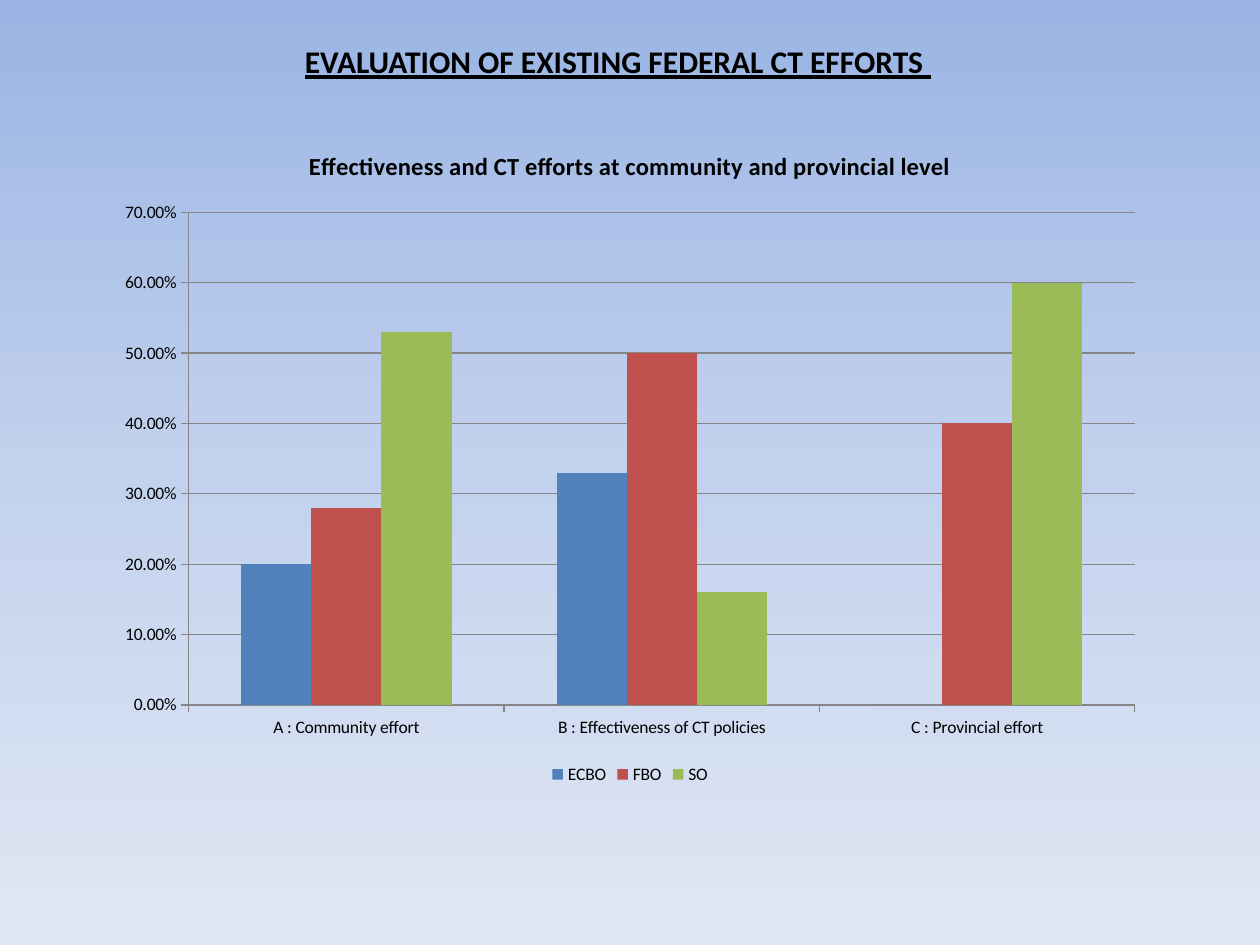
from copy import deepcopy

from pptx import Presentation
from pptx.chart.data import CategoryChartData
from pptx.dml.color import RGBColor
from pptx.enum.chart import XL_CHART_TYPE, XL_LEGEND_POSITION, XL_TICK_MARK
from pptx.enum.text import MSO_ANCHOR, MSO_AUTO_SIZE, PP_ALIGN
from pptx.util import Pt

COLUMNS = XL_CHART_TYPE.COLUMN_CLUSTERED
BOTTOM = XL_LEGEND_POSITION.BOTTOM
OUTSIDE = XL_TICK_MARK.OUTSIDE
TOP = MSO_ANCHOR.TOP
LEFT = PP_ALIGN.LEFT
GROW = MSO_AUTO_SIZE.SHAPE_TO_FIT_TEXT

FONT = "Calibri"
BLACK = RGBColor(0x00, 0x00, 0x00)
GREY = RGBColor(0x86, 0x86, 0x86)
BLUE = RGBColor(0x4F, 0x81, 0xBD)
RED = RGBColor(0xC0, 0x50, 0x4D)
GREEN = RGBColor(0x9B, 0xBB, 0x59)
SKY = [
    (0, RGBColor(0x9A, 0xB5, 0xE4)),
    (0.5, RGBColor(0xC2, 0xD1, 0xED)),
    (1, RGBColor(0xE1, 0xE8, 0xF5)),
]

HEADING = "EVALUATION OF EXISTING FEDERAL CT EFFORTS "
CHART_TITLE = "Effectiveness and CT efforts at community and provincial level"
PERCENT = "0.00%"
EFFORTS = ["A : Community effort", "B : Effectiveness of CT policies", "C : Provincial effort"]
GROUPS = [
    ("ECBO", (0.2, 0.33, 0), BLUE),
    ("FBO", (0.28, 0.5, 0.4), RED),
    ("SO", (0.53, 0.16, 0.6), GREEN),
]


def style_font(font, size, bold=False):
    font.name = FONT
    font.size = Pt(size)
    font.bold = bold
    font.color.rgb = BLACK


def style_line(line):
    line.color.rgb = GREY
    line.width = Pt(0.75)


def paint_background(slide):
    fill = slide.background.fill
    fill.gradient()
    fill.gradient_angle = 270  # counter-clockwise, so top to bottom
    first_stop = fill.gradient_stops[0]._gs
    first_stop.addnext(deepcopy(first_stop))
    for stop, (position, color) in zip(fill.gradient_stops, SKY):
        stop.position = position
        stop.color.rgb = color


def add_heading(slide):
    heading = slide.shapes.title
    heading.left, heading.top, heading.width, heading.height = Pt(167), Pt(20.5), Pt(375), Pt(29)
    frame = heading.text_frame
    frame.text = HEADING
    frame.word_wrap = False
    frame.auto_size = GROW
    frame.vertical_anchor = TOP
    line = frame.paragraphs[0]
    line.alignment = LEFT
    font = line.runs[0].font
    style_font(font, 18, bold=True)
    font.underline = True


def add_effort_chart(slide):
    data = CategoryChartData(number_format=PERCENT)
    data.categories = EFFORTS
    for name, shares, _ in GROUPS:
        data.add_series(name, shares)
    chart = slide.shapes.add_chart(COLUMNS, Pt(59.5), Pt(71), Pt(601), Pt(380), data).chart
    style_font(chart.font, 10)

    chart.has_title = True
    title = chart.chart_title
    title.include_in_layout = False
    title.text_frame.text = CHART_TITLE
    style_font(title.text_frame.paragraphs[0].runs[0].font, 14, bold=True)

    chart.has_legend = True
    chart.legend.position = BOTTOM
    chart.legend.include_in_layout = False

    for axis in (chart.category_axis, chart.value_axis):
        axis.major_tick_mark = OUTSIDE
        style_line(axis.format.line)
    shares_axis = chart.value_axis
    shares_axis.minimum_scale, shares_axis.maximum_scale = 0, 0.7
    shares_axis.major_unit = 0.1
    shares_axis.tick_labels.number_format = PERCENT
    shares_axis.tick_labels.number_format_is_linked = False
    style_line(shares_axis.major_gridlines.format.line)

    plot = chart.plots[0]
    plot.vary_by_categories = False
    plot.gap_width = 150
    plot.overlap = 0
    for series, (_, _, color) in zip(plot.series, GROUPS):
        series.format.fill.solid()
        series.format.fill.fore_color.rgb = color


def main():
    deck = Presentation()
    deck.slide_width, deck.slide_height = Pt(720), Pt(540)
    slide = deck.slides.add_slide(deck.slide_layouts[5])
    paint_background(slide)
    add_heading(slide)
    add_effort_chart(slide)
    deck.save("out.pptx")


if __name__ == "__main__":
    main()
